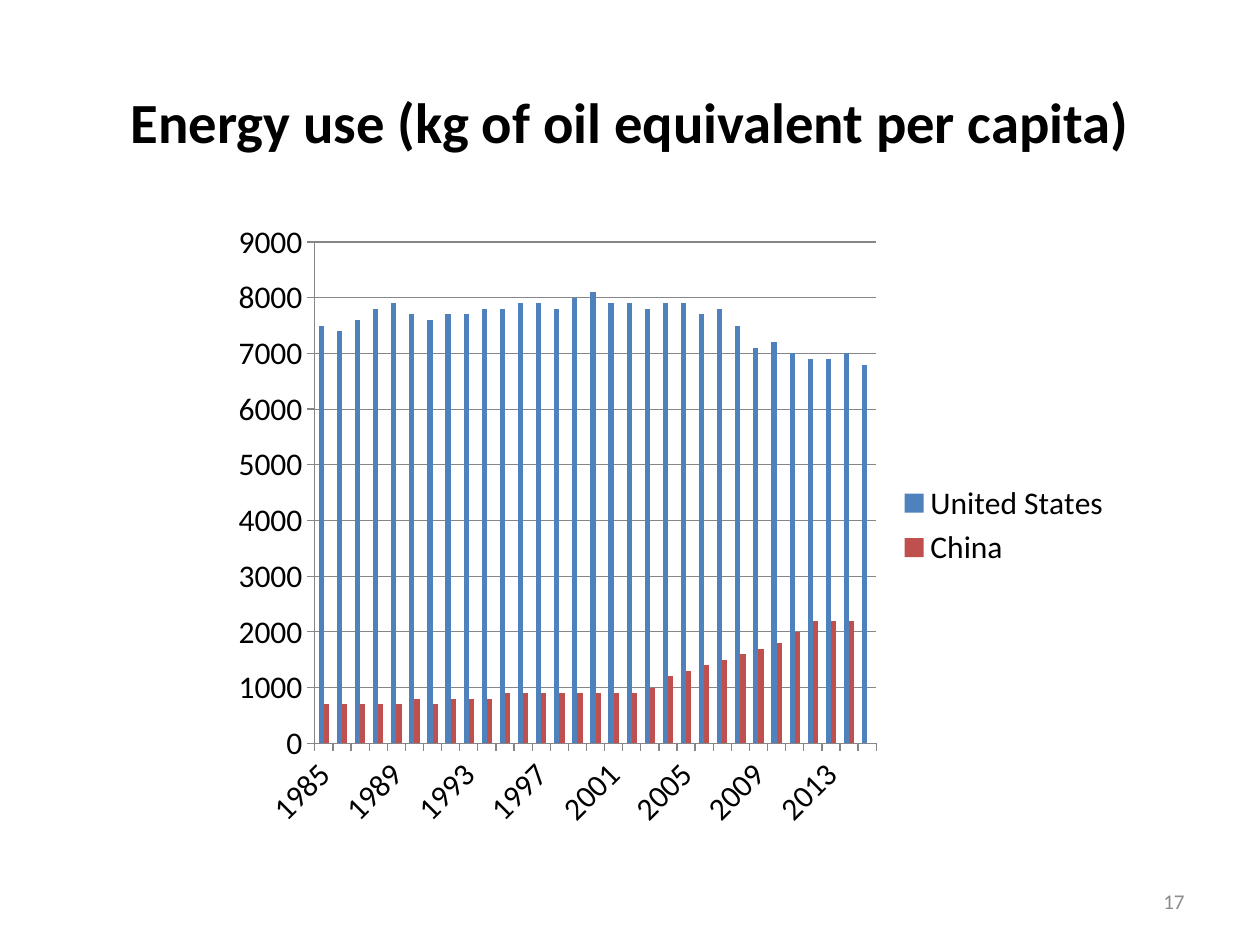
import pptx
import pptx.chart.data
import pptx.dml.color
import pptx.enum.chart
import pptx.enum.text
import pptx.util

Inches = pptx.util.Inches
Pt = pptx.util.Pt

FONT = "Calibri"
COLORS = {
    "text": "000000",
    "page": "8C8C8C",
    "axis": "868686",
    "United States": "4F81BD",
    "China": "C0504D",
}
YEARS = range(1985, 2016)
ENERGY_USE = {
    "United States": [
        7500, 7400, 7600, 7800, 7900, 7700, 7600, 7700, 7700, 7800, 7800,
        7900, 7900, 7800, 8000, 8100, 7900, 7900, 7800, 7900, 7900, 7700,
        7800, 7500, 7100, 7200, 7000, 6900, 6900, 7000, 6800],
    "China": [
        700, 700, 700, 700, 700, 800, 700, 800, 800, 800, 900,
        900, 900, 900, 900, 900, 900, 900, 1000, 1200, 1300, 1400,
        1500, 1600, 1700, 1800, 2000, 2200, 2200, 2200, None],
}


def color(name):
    return pptx.dml.color.RGBColor.from_string(COLORS[name])


def style_font(font, size, color_name, bold=False):
    font.name = FONT
    font.size = Pt(size)
    font.bold = bold
    font.color.rgb = color(color_name)


def write_line(frame, text, alignment, anchor, size, color_name, bold=False):
    frame.word_wrap = True
    frame.auto_size = pptx.enum.text.MSO_AUTO_SIZE.NONE
    frame.vertical_anchor = anchor
    paragraph = frame.paragraphs[0]
    paragraph.alignment = alignment
    run = paragraph.add_run()
    run.text = text
    style_font(run.font, size, color_name, bold)


def add_title(slide, text):
    title = slide.shapes.title
    title.left, title.top = Inches(0.5), Inches(0.3)
    title.width, title.height = Inches(9), Inches(0.93)
    title.text_frame.margin_bottom = 0
    write_line(title.text_frame, text, pptx.enum.text.PP_ALIGN.CENTER,
               pptx.enum.text.MSO_ANCHOR.BOTTOM, 32.4, "text", bold=True)


def add_page_number(slide, number):
    page = slide.shapes.add_textbox(
        Inches(7.17), Inches(6.95), Inches(2.33), Inches(0.4))
    write_line(page.text_frame, number, pptx.enum.text.PP_ALIGN.RIGHT,
               pptx.enum.text.MSO_ANCHOR.MIDDLE, 12, "page")


def style_line(line):
    line.color.rgb = color("axis")
    line.width = Pt(0.75)


def add_energy_chart(slide):
    data = pptx.chart.data.CategoryChartData()
    data.categories = [str(year) for year in YEARS]
    for country, values in ENERGY_USE.items():
        data.add_series(country, values)
    chart = slide.shapes.add_chart(
        pptx.enum.chart.XL_CHART_TYPE.COLUMN_CLUSTERED,
        Inches(1.75), Inches(1.67), Inches(7.17), Inches(5), data).chart
    style_font(chart.font, 18, "text")
    chart.has_title = False

    chart.has_legend = True
    chart.legend.position = pptx.enum.chart.XL_LEGEND_POSITION.RIGHT
    chart.legend.include_in_layout = False

    for axis in (chart.category_axis, chart.value_axis):
        axis.major_tick_mark = pptx.enum.chart.XL_TICK_MARK.OUTSIDE
        axis.minor_tick_mark = pptx.enum.chart.XL_TICK_MARK.NONE
        style_line(axis.format.line)
    chart.value_axis.minimum_scale = 0
    chart.value_axis.maximum_scale = 9000
    chart.value_axis.major_unit = 1000
    chart.value_axis.has_major_gridlines = True
    style_line(chart.value_axis.major_gridlines.format.line)

    columns = chart.plots[0]
    columns.gap_width = 150
    columns.vary_by_categories = False
    for country in columns.series:
        country.invert_if_negative = False
        country.format.fill.solid()
        country.format.fill.fore_color.rgb = color(country.name)


def main():
    deck = pptx.Presentation()
    deck.slide_width, deck.slide_height = Inches(10), Inches(7.5)
    slide = deck.slides.add_slide(deck.slide_layouts.get_by_name("Title Only"))
    add_title(slide, "Energy use (kg of oil equivalent per capita)")
    add_energy_chart(slide)
    add_page_number(slide, "17")
    deck.save("out.pptx")


if __name__ == "__main__":
    main()
